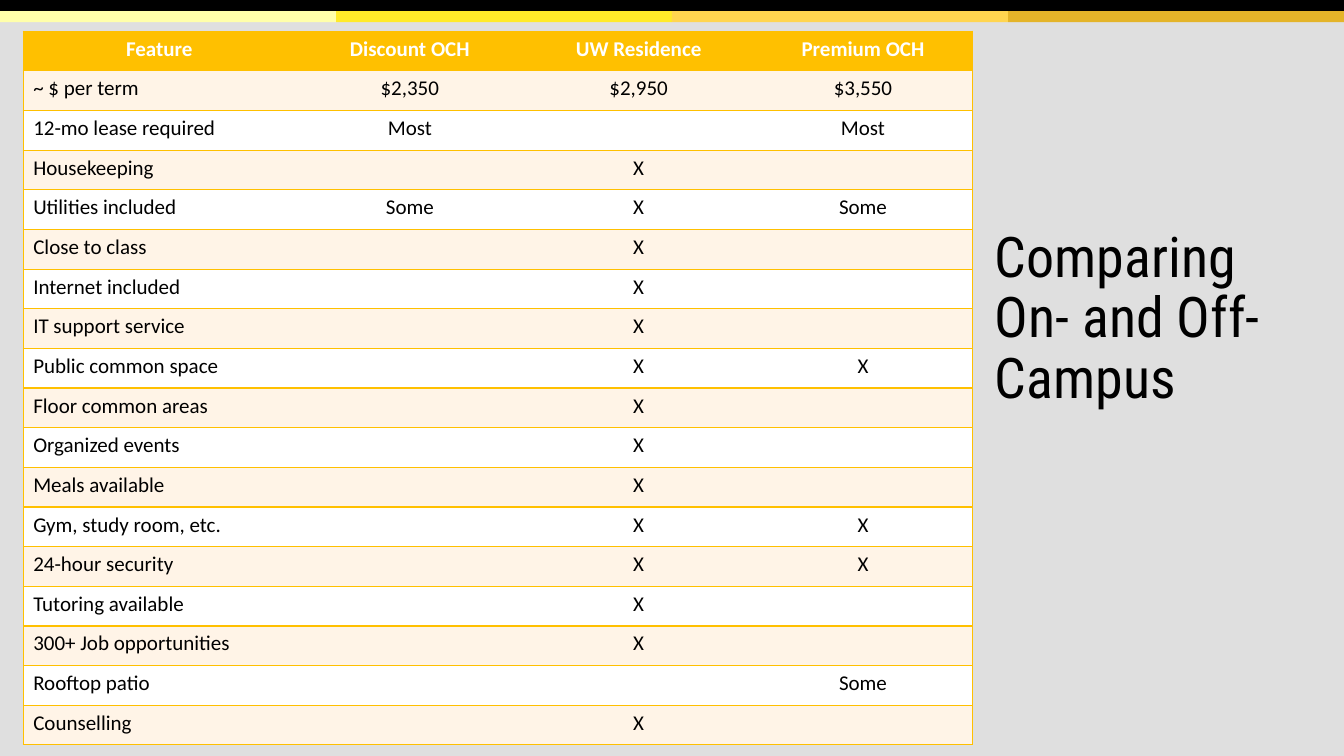
import pptx
import pptx.util
import pptx.enum.shapes
import pptx.enum.text
import pptx.dml.color
import pptx.oxml.ns
import lxml.etree

Inch = pptx.util.Inches
Pt = pptx.util.Pt
align = pptx.enum.text.PP_ALIGN
qn = pptx.oxml.ns.qn

WIDE, HIGH = 13.33, 7.5
HUES = {
    "back": "DFDFDF", "black": "000000", "white": "FFFFFF",
    "gold": "FFC000", "cream": "FFF4E7",
    "pale": "FFFFAA", "lemon": "FFEA29", "amber": "FFD54F", "ochre": "E4B429",
}


def hue(name):
    return pptx.dml.color.RGBColor.from_string(HUES[name])


def style(font, looks, color):
    for key, value in looks.items():
        setattr(font, key, value)
    font.color.rgb = hue(color)


deck = pptx.Presentation()
deck.slide_width, deck.slide_height = Inch(WIDE), Inch(HIGH)
slide = deck.slides.add_slide(deck.slide_layouts[6])

# Backdrop, black strip and four yellow bands
BAND = 0.11
blocks = [("back", 0, 0, WIDE, HIGH), ("black", 0, 0, WIDE, BAND)]
for i, name in enumerate(["pale", "lemon", "amber", "ochre"]):
    blocks.append((name, i * WIDE / 4, BAND, WIDE / 4, BAND))
for name, *place in blocks:
    block = slide.shapes.add_shape(
        pptx.enum.shapes.MSO_SHAPE.RECTANGLE, *[Inch(n) for n in place])
    block.shadow.inherit = False
    block.fill.solid()
    block.fill.fore_color.rgb = hue(name)
    block.line.fill.background()

# Title
title = slide.shapes.add_textbox(Inch(9.77), Inch(2.22), Inch(3.4), Inch(2.26))
frame = title.text_frame
frame.word_wrap = True
head = frame.paragraphs[0]
head.line_spacing = 0.9
run = head.add_run()
run.text = "Comparing On- and Off- Campus"
# Keep the first line to one word
frame.margin_right = Inch(0.3)
style(run.font, {"name": "Roboto Condensed", "size": Pt(40)}, "black")

# Comparison table
ROWS = [
    ("Feature", "Discount OCH", "UW Residence", "Premium OCH"),
    ("~ $ per term", "$2,350", "$2,950", "$3,550"),
    ("12-mo lease required", "Most", "", "Most"),
    ("Housekeeping", "", "X", ""),
    ("Utilities included", "Some", "X", "Some"),
    ("Close to class", "", "X", ""),
    ("Internet included", "", "X", ""),
    ("IT support service", "", "X", ""),
    ("Public common space", "", "X", "X"),
    ("Floor common areas", "", "X", ""),
    ("Organized events", "", "X", ""),
    ("Meals available", "", "X", ""),
    ("Gym, study room, etc.", "", "X", "X"),
    ("24-hour security", "", "X", "X"),
    ("Tutoring available", "", "X", ""),
    ("300+ Job opportunities", "", "X", ""),
    ("Rooftop patio", "", "", "Some"),
    ("Counselling", "", "X", ""),
]
COLS = [2.7, 2.27, 2.27, 2.18]
TALL = 7.08
SIZE = 15
NO_GRID = "{2D5ABB26-0587-4C30-8999-92F81FD0307C}"

table = slide.shapes.add_table(
    len(ROWS), len(COLS), Inch(0.23), Inch(0.31), Inch(sum(COLS)), Inch(TALL)).table
table._tbl.tblPr.find(qn("a:tableStyleId")).text = NO_GRID
for column, width in zip(table.columns, COLS):
    column.width = Inch(width)

for r, words in enumerate(ROWS):
    table.rows[r].height = Inch(TALL / len(ROWS))
    for c, text in enumerate(words):
        cell = table.cell(r, c)

        # Gold rules between rows and around the table
        props = cell._tc.get_or_add_tcPr()
        sides = ["lnL"] * (c == 0) + ["lnR"] * (c == len(COLS) - 1) + ["lnT", "lnB"]
        for side in sides:
            rule = lxml.etree.SubElement(props, qn("a:" + side), w=str(Pt(1)))
            solid = lxml.etree.SubElement(rule, qn("a:solidFill"))
            lxml.etree.SubElement(solid, qn("a:srgbClr"), val=HUES["gold"])

        # Header row, then alternating cream and white
        cell.fill.solid()
        cell.fill.fore_color.rgb = hue(
            "gold" if r == 0 else "cream" if r % 2 else "white")

        para = cell.text_frame.paragraphs[0]
        para.alignment = align.LEFT if r and c == 0 else align.CENTER
        if text:
            run = para.add_run()
            run.text = text
            looks = {"name": "Calibri", "size": Pt(SIZE), "bold": r == 0}
            style(run.font, looks, "black" if r else "white")
        else:
            # Empty cells keep the same line height
            lxml.etree.SubElement(para._p, qn("a:endParaRPr"), sz=str(SIZE * 100))

deck.save("out.pptx")
